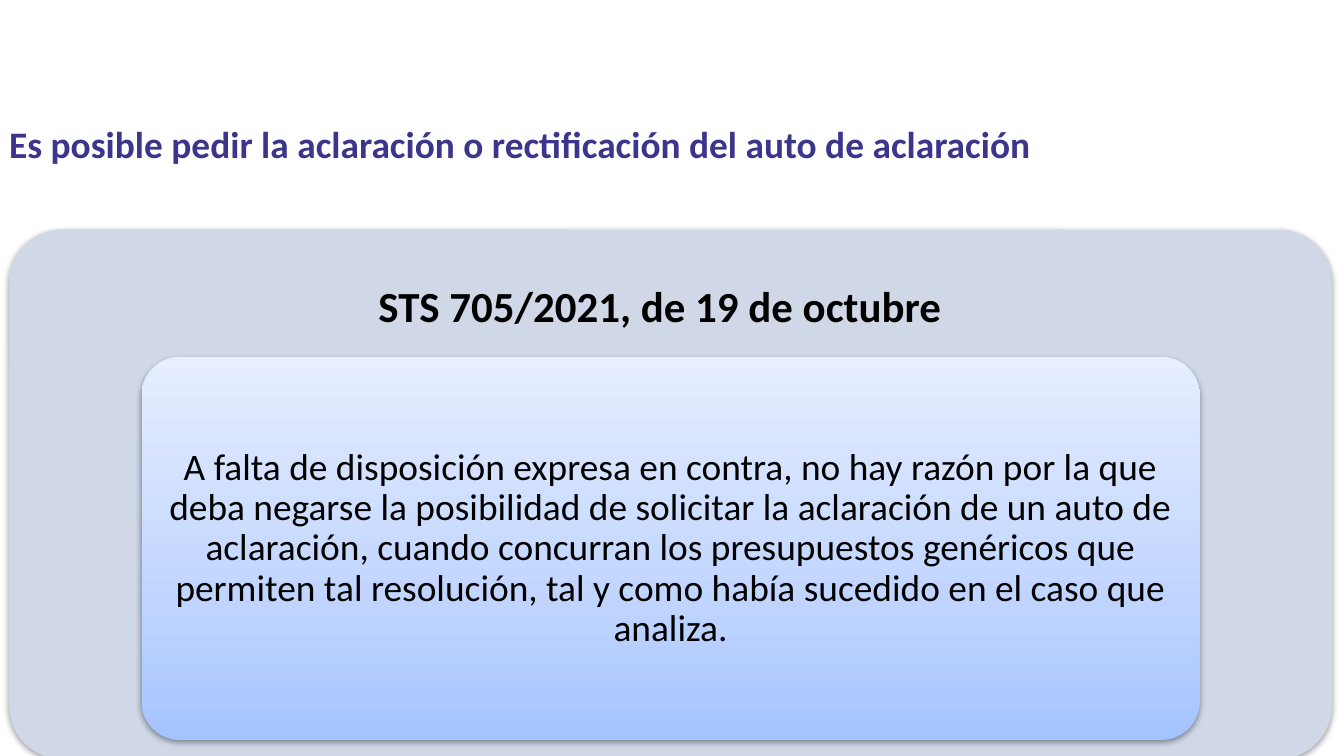
from lxml.etree import SubElement
from pptx import Presentation
from pptx.dml.color import RGBColor
from pptx.enum.shapes import MSO_SHAPE
from pptx.enum.text import MSO_ANCHOR, PP_ALIGN
from pptx.oxml.ns import qn
from pptx.util import Pt

INDIGO = RGBColor(0x3B, 0x35, 0x8C)
PANEL = RGBColor(0xD0, 0xD8, 0xE8)
BLACK = RGBColor(0, 0, 0)
CARD_STOPS = [(0, RGBColor(0xA4, 0xC4, 0xFF)),
              (35, RGBColor(0xBF, 0xD4, 0xFF)),
              (100, RGBColor(0xE6, 0xEE, 0xFF))]

HEADING = "Es posible pedir la aclaración o rectificación del auto de aclaración"
RULING = "STS 705/2021, de 19 de octubre"
SUMMARY = (
    "A falta de disposición expresa en contra, no hay razón por la que deba "
    "negarse la posibilidad de solicitar la aclaración de un auto de aclaración, "
    "cuando concurran los presupuestos genéricos que permiten tal resolución, "
    "tal y como había sucedido en el caso que analiza."
)


def add_text(s, box, text, size, color=BLACK, bold=False, align=PP_ALIGN.CENTER,
             anchor=MSO_ANCHOR.MIDDLE, insets=(7.2, 3.6, 7.2, 3.6), spacing=0.9):
    """Add a wrapped one-paragraph text box."""
    tf = s.shapes.add_textbox(*map(Pt, box)).text_frame
    tf.word_wrap = True
    tf.vertical_anchor = anchor
    tf.margin_left, tf.margin_top, tf.margin_right, tf.margin_bottom = map(Pt, insets)
    p = tf.paragraphs[0]
    p.alignment = align
    p.line_spacing = spacing
    r = p.add_run()
    r.text = text
    r.font.name = "Calibri"
    r.font.size = Pt(size)
    r.font.bold = bold
    r.font.color.rgb = color


def add_rounded(s, box):
    """Add a borderless rounded rectangle with a soft shadow below it."""
    sp = s.shapes.add_shape(MSO_SHAPE.ROUNDED_RECTANGLE, *map(Pt, box))
    sp.adjustments[0] = 0.1
    sp.line.fill.background()
    sp.shadow.inherit = False
    effects = sp._element.spPr.find(qn("a:effectLst"))
    shadow = SubElement(effects, qn("a:outerShdw"), blurRad=str(Pt(3.1)),
                        dist=str(Pt(1.6)), dir="5400000", rotWithShape="0")
    color = SubElement(shadow, qn("a:srgbClr"), val=str(BLACK))
    SubElement(color, qn("a:alpha"), val="38000")
    return sp


def fill_gradient(sp, stops):
    """Fill a shape with colour stops running from bottom to top."""
    sp.fill.gradient()
    grad = sp._element.spPr.find(qn("a:gradFill"))
    stop_list = grad.find(qn("a:gsLst"))
    for stop in list(stop_list):
        stop_list.remove(stop)
    for position, color in stops:
        stop = SubElement(stop_list, qn("a:gs"), pos=str(position * 1000))
        SubElement(stop, qn("a:srgbClr"), val=str(color))
    grad.find(qn("a:lin")).set("ang", "16200000")


def add_heading(s, box):
    """Place the slide heading."""
    add_text(s, box, HEADING, 20, INDIGO, True, PP_ALIGN.LEFT, MSO_ANCHOR.TOP,
             spacing=1)


def add_ruling(s, box):
    """Place the panel with its ruling title and summary card."""
    left, top, width, height = box
    panel = add_rounded(s, box)
    panel.fill.solid()
    panel.fill.fore_color.rgb = PANEL
    add_text(s, (left, top, width, height * 0.3), RULING, 23, bold=True,
             insets=(7.2, 7.2, 18, 7.2))
    card_box = (left + width * 0.1, top + height * 0.241, width * 0.8, height * 0.723)
    fill_gradient(add_rounded(s, card_box), CARD_STOPS)
    add_text(s, card_box, SUMMARY, 20, insets=(10, 9, 10, 9))


def main():
    """Build the slide and save it."""
    prs = Presentation()
    prs.slide_width, prs.slide_height = Pt(720), Pt(405)
    s = prs.slides.add_slide(prs.slide_layouts[6])
    add_heading(s, (-2.2, 61.2, 713.5, 31.7))
    add_ruling(s, (5, 123, 708.5, 283.7))
    prs.save("out.pptx")


if __name__ == "__main__":
    main()
